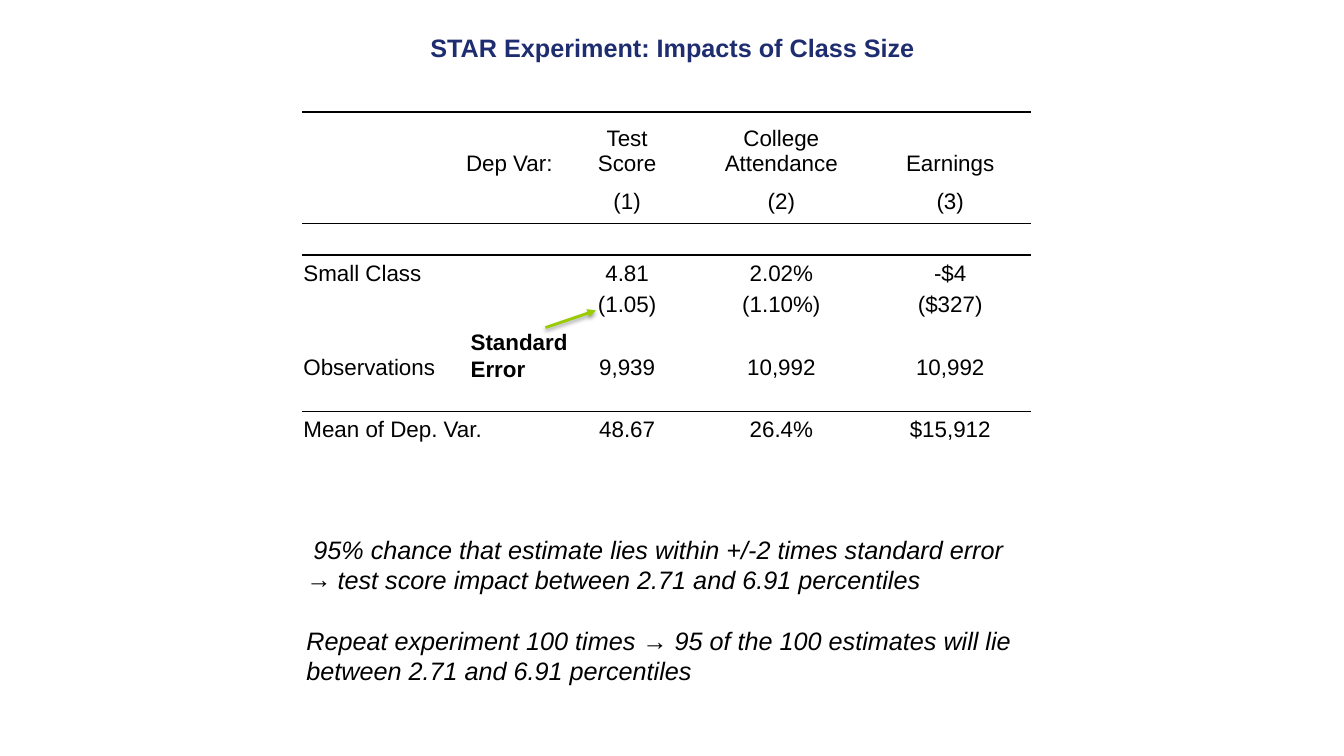
from lxml.etree import SubElement
from pptx import Presentation
from pptx.dml.color import RGBColor
from pptx.enum.shapes import MSO_CONNECTOR
from pptx.enum.text import MSO_ANCHOR, PP_ALIGN
from pptx.oxml import parse_xml
from pptx.oxml.ns import nsdecls, qn
from pptx.util import Inches, Pt

COLORS = {"title": "1E2D70", "text": "000000", "arrow": "99CC00"}
NO_GRID_STYLE = "{2D5ABB26-0587-4C30-8999-92F81FD0307C}"

COLUMN_WIDTHS = [2.56, 1.32, 1.74, 1.61]
ROW_HEIGHTS = [0.64, 0.12, 0.35] + [0.31] * 7
RESULTS = {
    0: ["Dep Var:", "Test\nScore", "College\nAttendance", "Earnings"],
    2: ["", "(1)", "(2)", "(3)"],
    4: ["Small Class", "4.81", "2.02%", "-$4"],
    5: ["", "(1.05)", "(1.10%)", "($327)"],
    7: ["Observations", "9,939", "10,992", "10,992"],
    9: ["Mean of Dep. Var.", "48.67", "26.4%", "$15,912"],
}
RULES = {0: ("lnT", 1.5), 2: ("lnB", 1), 3: ("lnT", 1), 8: ("lnB", 1), 9: ("lnT", 1)}


def format_runs(paragraph, size, color="text", bold=False, italic=False):
    """Apply one font to every run of a paragraph."""
    for run in paragraph.runs:
        run.font.name = "Arial"
        run.font.size = Pt(size)
        run.font.bold = bold
        run.font.italic = italic
        run.font.color.rgb = RGBColor.from_string(COLORS[color])


def add_title(slide, left, top, width, height):
    """Fill and place the title placeholder."""
    title = slide.shapes.title
    title.left, title.top = Inches(left), Inches(top)
    title.width, title.height = Inches(width), Inches(height)
    frame = title.text_frame
    frame.text = "STAR Experiment: Impacts of Class Size"
    frame.vertical_anchor = MSO_ANCHOR.MIDDLE
    frame.margin_top = frame.margin_bottom = 0
    frame.paragraphs[0].alignment = PP_ALIGN.CENTER
    format_runs(frame.paragraphs[0], 18, "title", bold=True)


def draw_rule(cell, edge, width):
    """Draw a border on one edge of a cell."""
    properties = cell._tc.get_or_add_tcPr()
    properties.insert(0, parse_xml(
        f'<a:{edge} {nsdecls("a")} w="{int(Pt(width))}"><a:solidFill>'
        f'<a:srgbClr val="{COLORS["text"]}"/></a:solidFill></a:{edge}>'))


def fill_cell(cell, text, alignment, anchor):
    """Write a cell with narrow margins and no fill."""
    cell.margin_left = cell.margin_right = cell.margin_top = Inches(0.01)
    cell.margin_bottom = 0
    cell.vertical_anchor = anchor
    cell.fill.background()
    cell.text_frame.text = text
    for paragraph in cell.text_frame.paragraphs:
        paragraph.alignment = alignment
        format_runs(paragraph, 16)
        if not text:
            SubElement(paragraph._p, qn("a:endParaRPr"), sz="400")


def add_results_table(slide, left, top):
    """Place the regression table at the given corner."""
    frame = slide.shapes.add_table(
        len(ROW_HEIGHTS), len(COLUMN_WIDTHS), Inches(left), Inches(top),
        Inches(sum(COLUMN_WIDTHS)), Inches(sum(ROW_HEIGHTS)))
    table = frame.table
    table.first_row = table.horz_banding = False
    table._tbl.tblPr.find(qn("a:tableStyleId")).text = NO_GRID_STYLE
    for column, width in zip(table.columns, COLUMN_WIDTHS):
        column.width = Inches(width)
    for row_index, height in enumerate(ROW_HEIGHTS):
        table.rows[row_index].height = Inches(height)
        texts = RESULTS.get(row_index, [""] * len(COLUMN_WIDTHS))
        anchor = MSO_ANCHOR.TOP if row_index == 2 else MSO_ANCHOR.BOTTOM
        for column_index, text in enumerate(texts):
            cell = table.cell(row_index, column_index)
            label_alignment = PP_ALIGN.RIGHT if row_index == 0 else PP_ALIGN.LEFT
            fill_cell(cell, text, PP_ALIGN.CENTER if column_index else label_alignment, anchor)
            if row_index in RULES:
                draw_rule(cell, *RULES[row_index])
    table.cell(0, 0).margin_right = Inches(0.08)


def add_text(slide, left, top, width, height, lines, size, **style):
    """Add a text box with one paragraph per line and return its paragraphs."""
    box = slide.shapes.add_textbox(Inches(left), Inches(top), Inches(width), Inches(height))
    box.text_frame.word_wrap = False
    box.text_frame.text = "\n".join(lines)
    for paragraph in box.text_frame.paragraphs:
        format_runs(paragraph, size, **style)
    return box.text_frame.paragraphs


def add_standard_error_callout(slide, left, top, width, height):
    """Add the label with an arrow that points up to the standard error."""
    arrow = slide.shapes.add_connector(
        MSO_CONNECTOR.STRAIGHT, Inches(left + 0.84), Inches(top + 0.04),
        Inches(left + 1.34), Inches(top - 0.13))
    arrow.line.width = Pt(2)
    arrow.line.color.rgb = RGBColor.from_string(COLORS["arrow"])
    SubElement(arrow.line._get_or_add_ln(), qn("a:tailEnd"), type="triangle")
    arrow._element.spPr.append(parse_xml(
        f'<a:effectLst {nsdecls("a")}><a:outerShdw blurRad="{int(Pt(3.1))}" '
        f'dist="{int(Pt(1.6))}" dir="5400000" rotWithShape="0">'
        f'<a:srgbClr val="{COLORS["text"]}"><a:alpha val="38000"/></a:srgbClr>'
        '</a:outerShdw></a:effectLst>'))
    add_text(slide, left, top, width, height, ["Standard", "Error"], 16, bold=True)


def add_interpretation(slide, left, top, width, height):
    """Add the reading of the confidence interval."""
    lines = [
        "95% chance that estimate lies within +/-2 times standard error",
        "test score impact between 2.71 and 6.91 percentiles",
        "Repeat experiment 100 times → 95 of the 100 estimates will lie",
        "between 2.71 and 6.91 percentiles",
    ]
    chance, impact, repeat, _ = add_text(
        slide, left, top, width, height, lines, 18, italic=True)
    chance._p.get_or_add_pPr().set("marL", str(Inches(0.07)))
    properties = impact._p.get_or_add_pPr()
    properties.set("marL", str(Inches(0.31)))
    properties.set("indent", str(-Inches(0.31)))
    SubElement(properties, qn("a:buFont"), typeface="Arial")
    SubElement(properties, qn("a:buChar"), char="→")
    repeat.space_before = Pt(22)


def main():
    """Build and save the slide."""
    presentation = Presentation()
    presentation.slide_width, presentation.slide_height = Inches(13.33), Inches(7.5)
    slide = presentation.slides.add_slide(presentation.slide_layouts[5])
    add_title(slide, 0.67, 0.33, 12, 0.28)
    add_results_table(slide, 3, 1.11)
    add_standard_error_callout(slide, 4.57, 3.21, 1.17, 0.64)
    add_interpretation(slide, 2.94, 5.25, 7.25, 1.62)
    presentation.save("out.pptx")


if __name__ == "__main__":
    main()
